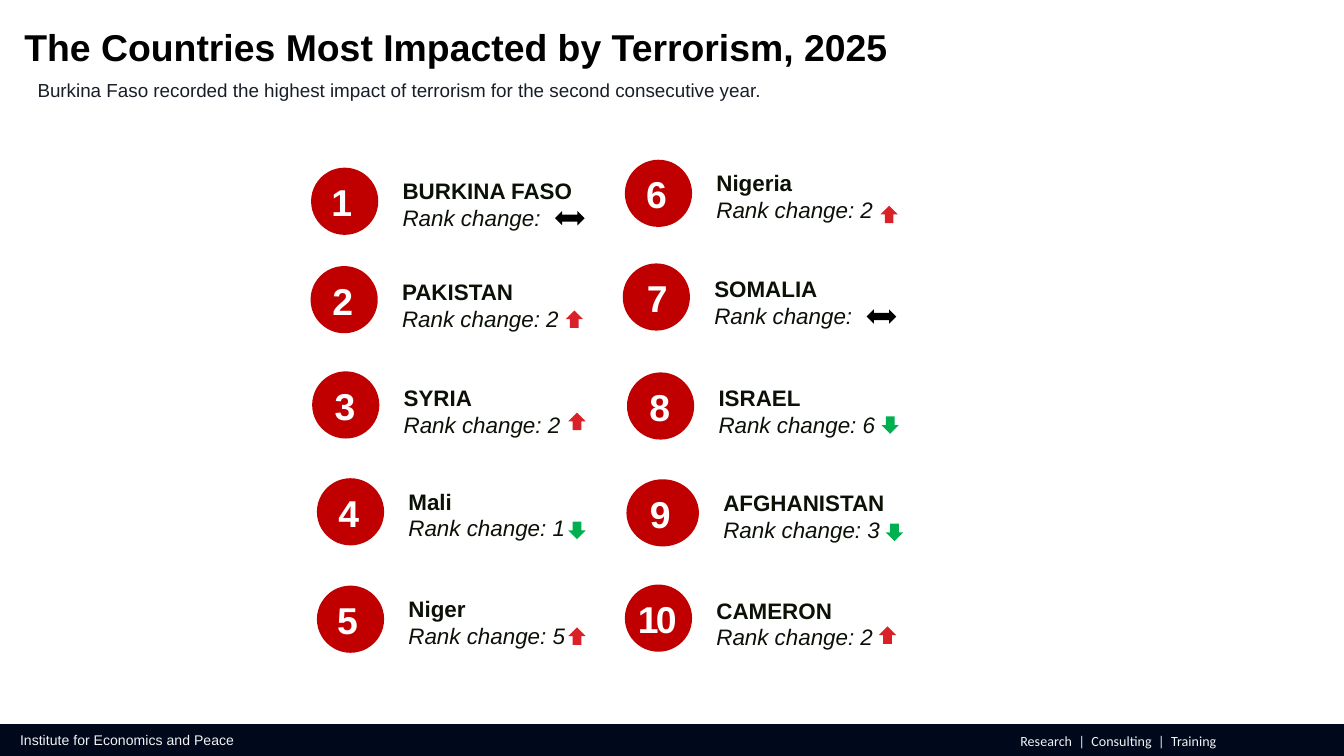
from dataclasses import dataclass
from enum import Enum

from pptx import Presentation
from pptx.dml.color import RGBColor
from pptx.enum.shapes import MSO_SHAPE
from pptx.enum.text import MSO_ANCHOR, PP_ALIGN
from pptx.shapes.autoshape import Shape
from pptx.slide import Slide
from pptx.util import Cm, Pt

SLIDE_WIDTH, SLIDE_HEIGHT = 25.4, 14.29
CIRCLE_SIZE = 1.27
NAME_GAP = 0.28
NUMBER_WIDTH = 1.8
NUMBER_DROP = 0.09


class Trend(Enum):
    """Arrow preset, colour, width and height in centimetres."""

    RISE = (MSO_SHAPE.UP_ARROW, "DA2128", 0.33, 0.33)
    FALL = (MSO_SHAPE.DOWN_ARROW, "00B050", 0.33, 0.33)
    SAME = (MSO_SHAPE.LEFT_RIGHT_ARROW, "000000", 0.56, 0.27)


@dataclass
class Country:
    """One ranking entry; lengths are in centimetres."""

    rank: int
    name: str
    change: str
    trend: Trend
    circle_left: float
    circle_top: float
    number_center: float
    name_top: float
    arrow_left: float
    arrow_top: float
    circle_width: float = CIRCLE_SIZE


COUNTRIES = [
    Country(1, "BURKINA FASO", "", Trend.SAME, 5.88, 3.17, 6.46, 3.25, 10.49, 3.99),
    Country(2, "PAKISTAN", "2", Trend.RISE, 5.87, 5.03, 6.48, 5.16, 10.69, 5.87),
    Country(3, "SYRIA", "2", Trend.RISE, 5.9, 7.02, 6.52, 7.16, 10.74, 7.8),
    Country(4, "Mali", "1", Trend.FALL, 5.99, 9.04, 6.59, 9.12, 10.74, 9.86),
    Country(5, "Niger", "5", Trend.RISE, 5.99, 11.07, 6.57, 11.15, 10.74, 11.86),
    Country(6, "Nigeria", "2", Trend.RISE, 11.81, 3.02, 12.41, 3.1, 16.64, 3.89),
    Country(7, "SOMALIA", "", Trend.SAME, 11.77, 4.98, 12.42, 5.11, 16.38, 5.85),
    Country(8, "ISRAEL", "6", Trend.FALL, 11.85, 7.04, 12.47, 7.16, 16.66, 7.87),
    Country(9, "AFGHANISTAN", "3", Trend.FALL, 11.84, 9.06, 12.48, 9.14, 16.74, 9.9, 1.37),
    Country(10, "CAMERON", "2", Trend.RISE, 11.81, 11.05, 12.42, 11.18, 16.61, 11.84),
]


def color(value: str) -> RGBColor:
    return RGBColor.from_string(value)


def add_filled_shape(slide: Slide, preset: MSO_SHAPE, left: float, top: float,
                     width: float, height: float, fill: str) -> Shape:
    shape = slide.shapes.add_shape(preset, Cm(left), Cm(top), Cm(width), Cm(height))
    shape.shadow.inherit = False
    shape.fill.solid()
    shape.fill.fore_color.rgb = color(fill)
    shape.line.fill.background()
    return shape


def add_text(slide: Slide, lines: list[str], left: float, top: float, width: float,
             height: float, size: float, text_color: str, *, bold: bool = False,
             font: str = "Arial", align: PP_ALIGN = PP_ALIGN.LEFT,
             inset: tuple[float, float] = (0.25, 0.13)) -> Shape:
    """Add a wrapping text box; inset is horizontal, then vertical."""
    box = slide.shapes.add_textbox(Cm(left), Cm(top), Cm(width), Cm(height))
    frame = box.text_frame
    frame.word_wrap = True
    frame.margin_left = frame.margin_right = Cm(inset[0])
    frame.margin_top = frame.margin_bottom = Cm(inset[1])
    frame.text = "\n".join(lines)
    for paragraph in frame.paragraphs:
        paragraph.alignment = align
        paragraph.font.name = font
        paragraph.font.size = Pt(size)
        paragraph.font.bold = bold
        paragraph.font.color.rgb = color(text_color)
    return box


def add_country(slide: Slide, country: Country) -> None:
    add_filled_shape(slide, MSO_SHAPE.OVAL, country.circle_left, country.circle_top,
                     country.circle_width, CIRCLE_SIZE, "C00000")
    number = add_text(slide, [str(country.rank)],
                      country.number_center - NUMBER_WIDTH / 2,
                      country.circle_top + NUMBER_DROP, NUMBER_WIDTH, 1.12,
                      20, "FFFFFF", bold=True, align=PP_ALIGN.CENTER)
    number_run = number.text_frame.paragraphs[0].runs[0]
    number_run._r.get_or_add_rPr().set("spc", "-150")

    label = add_text(slide, [country.name, f"Rank change: {country.change}".strip()],
                     country.circle_left + country.circle_width + NAME_GAP,
                     country.name_top, 3.9, 1.22, 12, "0B1107", bold=True,
                     inset=(0.18, 0.1))
    change_font = label.text_frame.paragraphs[1].font
    change_font.bold = False
    change_font.italic = True

    preset, fill, width, height = country.trend.value
    add_filled_shape(slide, preset, country.arrow_left, country.arrow_top,
                     width, height, fill)


def add_footer(slide: Slide) -> None:
    top = 13.69
    add_filled_shape(slide, MSO_SHAPE.RECTANGLE, 0, top, SLIDE_WIDTH,
                     SLIDE_HEIGHT - top, "00081C")
    add_text(slide, ["Institute for Economics and Peace"], 0.13, top, 4.65, 0.58,
             7.5, "F2F2F2")
    services = add_text(slide, ["Research  |  Consulting  |  Training"], 18.34, 13.72,
                        4.65, 0.58, 7.5, "F2F2F2", font="Calibri",
                        align=PP_ALIGN.RIGHT, inset=(0, 0))
    services.text_frame.vertical_anchor = MSO_ANCHOR.MIDDLE


def main() -> None:
    presentation = Presentation()
    presentation.slide_width = Cm(SLIDE_WIDTH)
    presentation.slide_height = Cm(SLIDE_HEIGHT)
    slide = presentation.slides.add_slide(presentation.slide_layouts[6])

    add_footer(slide)
    title = add_text(slide, ["The Countries Most Impacted by Terrorism, 2025"],
                     0.46, 0.56, 20.55, 0.76, 20, "000000", bold=True, inset=(0, 0))
    title.text_frame.paragraphs[0].line_spacing = 0.9
    add_text(slide, ["Burkina Faso recorded the highest impact of terrorism "
                     "for the second consecutive year."],
             0.46, 1.35, 18.87, 0.69, 10.1, "181E28")
    for country in COUNTRIES:
        add_country(slide, country)

    presentation.save("out.pptx")


if __name__ == "__main__":
    main()
